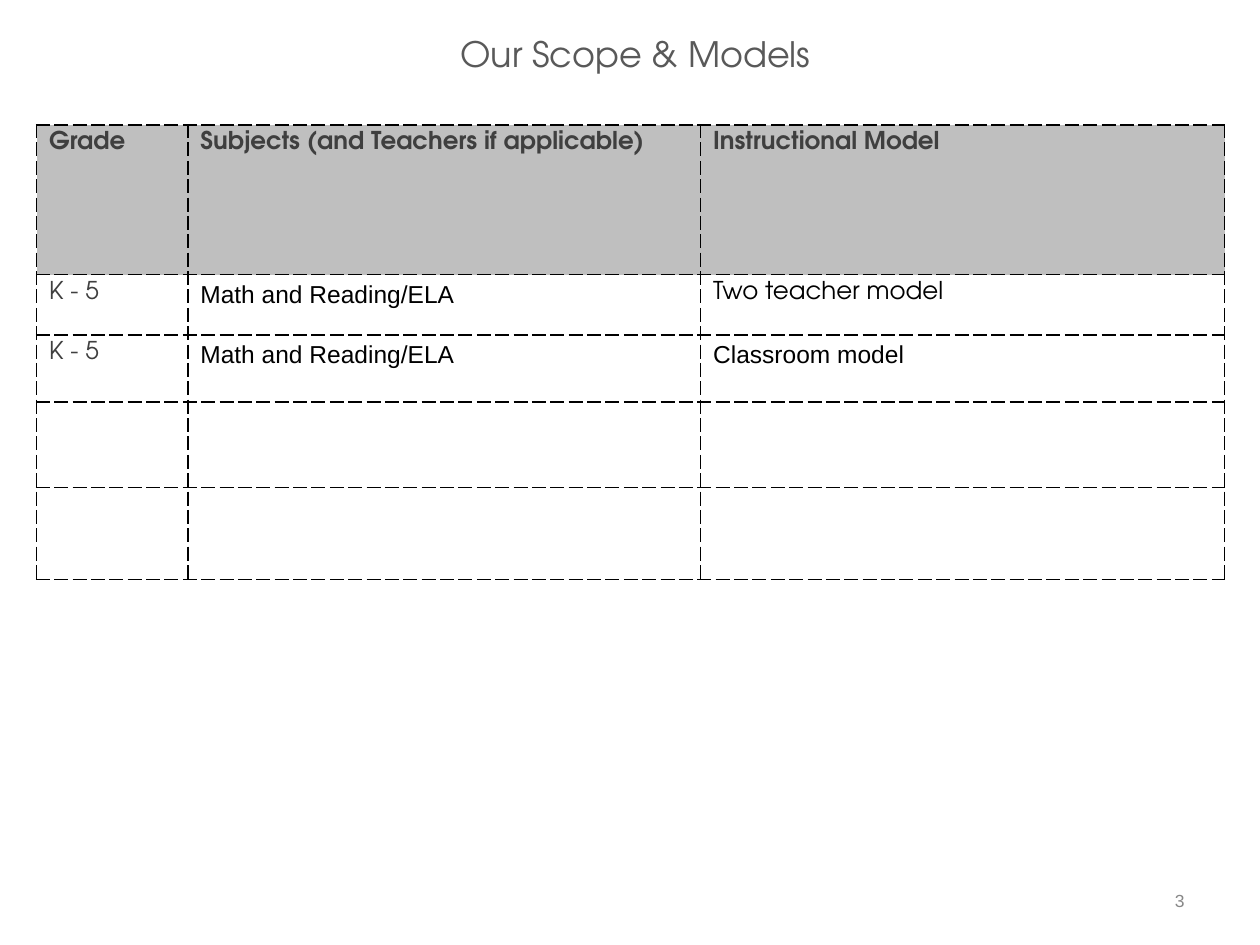
from dataclasses import dataclass

import pptx
import pptx.dml.color
import pptx.enum.text
import pptx.oxml
import pptx.oxml.ns
import pptx.util
from pptx.util import Inches


@dataclass(frozen=True)
class Theme:
    display: str = "TeX Gyre Adventor"
    body: str = "Arial"
    title: str = "595959"
    heading: str = "3F3F3F"
    ink: str = "000000"
    muted: str = "888888"
    header_fill: str = "BFBFBF"
    title_size: int = 20
    table_size: int = 14
    number_size: int = 10


THEME = Theme()
ALIGN = pptx.enum.text.PP_ALIGN
ANCHOR = pptx.enum.text.MSO_ANCHOR

HEADING = {"name": THEME.display, "color": THEME.heading, "bold": True}
GRADE = {"name": THEME.display, "color": THEME.heading, "bold": False}
DISPLAY = {"name": THEME.display, "color": THEME.ink, "bold": False}
BODY = {"name": THEME.body, "color": THEME.ink, "bold": False}

COLUMN_WIDTHS = [1.2, 4.07, 4.16]
ROW_HEIGHTS = [1.19, 0.48, 0.53, 0.68, 0.73]
ROWS = [
    [("Grade", HEADING), ("Subjects (and Teachers if applicable)", HEADING),
     ("Instructional Model", HEADING)],
    [("K - 5", GRADE), ("Math and Reading/ELA", BODY), ("Two teacher model", DISPLAY)],
    [("K - 5", GRADE), ("Math and Reading/ELA", BODY), ("Classroom model", BODY)],
]


def rgb(value):
    return pptx.dml.color.RGBColor.from_string(value)


def write(frame, text, size, color, align=ALIGN.LEFT, **font_values):
    para = frame.paragraphs[0]
    para.alignment = align
    span = para.add_run()
    span.text = text
    span.font.color.rgb = rgb(color)
    for name, value in {"size": pptx.util.Pt(size), **font_values}.items():
        setattr(span.font, name, value)
    return para


def add_title(page, text):
    title = page.shapes.title
    place = {"left": Inches(1.89), "top": Inches(0.14),
             "width": Inches(6.31), "height": Inches(0.49)}
    for name, value in place.items():
        setattr(title, name, value)
    frame = title.text_frame
    frame.auto_size = pptx.enum.text.MSO_AUTO_SIZE.NONE
    frame.vertical_anchor = ANCHOR.TOP
    para = write(frame, text, THEME.title_size, THEME.title, ALIGN.CENTER,
                 name=THEME.display)
    para.line_spacing = 1.2


def add_dashed_borders(cell):
    properties = cell._tc.get_or_add_tcPr()
    for side in ("lnL", "lnR", "lnT", "lnB"):
        properties.append(pptx.oxml.parse_xml(
            f'<a:{side} {pptx.oxml.ns.nsdecls("a")} w="{pptx.util.Pt(1)}">'
            f'<a:solidFill><a:srgbClr val="{THEME.ink}"/></a:solidFill>'
            f'<a:prstDash val="dash"/></a:{side}>'))


def add_scope_table(page):
    table = page.shapes.add_table(
        len(ROW_HEIGHTS), len(COLUMN_WIDTHS), Inches(0.29), Inches(0.99),
        Inches(sum(COLUMN_WIDTHS)), Inches(sum(ROW_HEIGHTS))).table
    table.horz_banding = False
    for column, width in zip(table.columns, COLUMN_WIDTHS):
        column.width = Inches(width)
    for row, height in zip(table.rows, ROW_HEIGHTS):
        row.height = Inches(height)
        for cell in row.cells:
            add_dashed_borders(cell)
            cell.fill.background()
    for cell in table.rows[0].cells:
        cell.fill.solid()
        cell.fill.fore_color.rgb = rgb(THEME.header_fill)
    for row, entries in zip(table.rows, ROWS):
        for cell, (text, style) in zip(row.cells, entries):
            write(cell.text_frame, text, THEME.table_size, **style)


def add_page_number(page, number):
    box = page.shapes.add_textbox(Inches(7.17), Inches(6.95), Inches(2.33), Inches(0.4))
    box.text_frame.word_wrap = True
    box.text_frame.vertical_anchor = ANCHOR.MIDDLE
    write(box.text_frame, number, THEME.number_size, THEME.muted, ALIGN.RIGHT,
          name=THEME.body)


def main():
    deck = pptx.Presentation()
    deck.slide_width, deck.slide_height = Inches(10), Inches(7.5)
    page = deck.slides.add_slide(deck.slide_layouts.get_by_name("Title Only"))
    add_title(page, "Our Scope & Models")
    add_scope_table(page)
    add_page_number(page, "3")
    deck.save("out.pptx")


if __name__ == "__main__":
    main()
